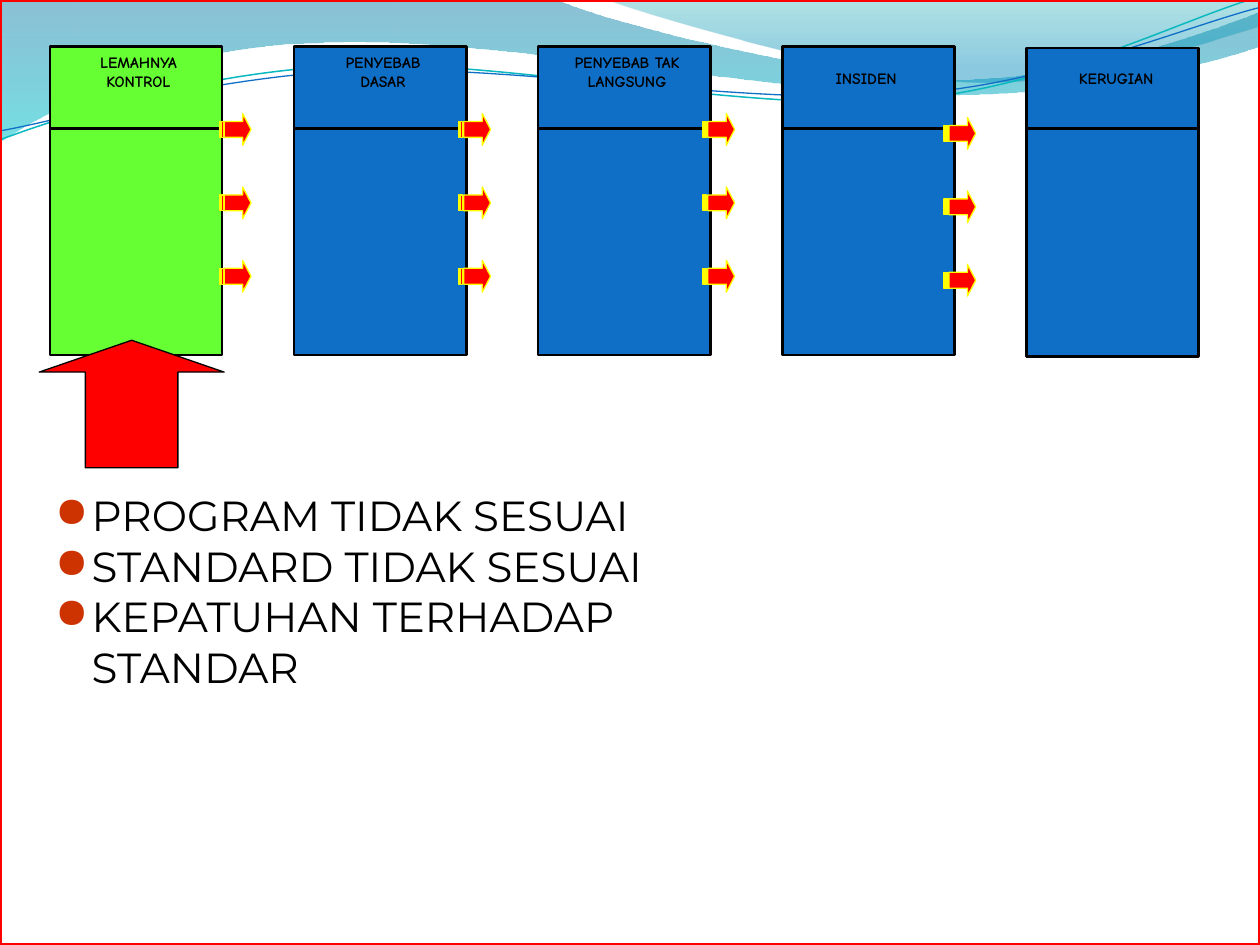
from pptx import Presentation
from pptx import util as u
from pptx.dml import color as dml
from pptx.enum import shapes, text
from pptx.oxml import ns, xmlchemy as xc

KIND = shapes.MSO_SHAPE
BLACK, RED, BLUE = "000000", "FF0000", "0F6FC6"
LABEL = {"name": "Comic Neue", "size": u.Pt(9), "bold": True}
BODY = {"name": "Montserrat", "size": u.Pt(24), "bold": False}


def rgb(code):
    return dml.RGBColor.from_string(code)


def bend(a, b, c, d, steps=24):
    """Points along a cubic curve, without its start."""
    for i in range(1, steps + 1):
        t = i / steps
        s = 1 - t
        yield tuple(s**3 * p + 3 * s * s * t * q + 3 * s * t * t * r + t**3 * e
                    for p, q, r, e in zip(a, b, c, d))


def trace(parts):
    """A part of two numbers is a straight step, one of six is a curve."""
    pts = []
    for part in parts:
        if len(part) == 2:
            pts.append(part)
        else:
            pts += bend(pts[-1], part[:2], part[2:4], part[4:])
    return [(u.Cm(x), u.Cm(y)) for x, y in pts]


class Pen:
    def __init__(self, slide):
        self.slide = slide
        self.set = slide.shapes

    def paint(self, item, fill, line, width):
        item.shadow.inherit = False
        if fill:
            item.fill.solid()
            item.fill.fore_color.rgb = rgb(fill)
        else:
            item.fill.background()
        if line:
            item.line.color.rgb = rgb(line)
            item.line.width = u.Pt(width)
        else:
            item.line.fill.background()
        return item

    def shape(self, kind, box, fill, line, width, adj=()):
        item = self.set.add_shape(kind, *map(u.Cm, box))
        for i, val in enumerate(adj):
            item.adjustments[i] = val
        return self.paint(item, fill, line, width)

    def free(self, parts, close=False, line=None, width=0):
        first, *rest = trace(parts)
        path = self.set.build_freeform(*first)
        path.add_line_segments(rest, close=close)
        return self.paint(path.convert_to_shape(), None, line, width)

    def wave(self, parts, stops):
        item = self.free(parts, close=True)
        item.fill.gradient()
        item.fill.gradient_angle = 270
        for stop, (pos, code, _) in zip(item.fill.gradient_stops, stops):
            stop.position = pos
            stop.color.rgb = rgb(code)
        tints = item._element.spPr.iter(ns.qn("a:srgbClr"))
        for tint, (_, _, alpha) in zip(tints, stops):
            node = xc.OxmlElement("a:alpha")
            node.set("val", str(alpha * 1000))
            tint.append(node)

    def rule(self, x1, y1, x2, y2):
        item = self.set.add_connector(
            shapes.MSO_CONNECTOR.STRAIGHT, *map(u.Cm, (x1, y1, x2, y2)))
        item.line.color.rgb = rgb(BLACK)
        item.line.width = u.Pt(1.5)
        item._element.spPr.append(xc.OxmlElement("a:effectLst"))

    def words(self, box, lines, form, align, wrap=True, dot=None):
        frame = self.set.add_textbox(*map(u.Cm, box)).text_frame
        frame.word_wrap = wrap
        for i, line in enumerate(lines):
            para = frame.add_paragraph() if i else frame.paragraphs[0]
            para.alignment = align
            run = para.add_run()
            run.text = line
            run.font.color.rgb = rgb(BLACK)
            for key, val in form.items():
                setattr(run.font, key, val)
            if dot:
                self.bullet(para, dot)

    def bullet(self, para, code):
        props = para._p.get_or_add_pPr()
        hang = u.Cm(0.74)
        props.set("marL", str(hang))
        props.set("indent", str(-hang))
        tint = xc.OxmlElement("a:buClr")
        hue = xc.OxmlElement("a:srgbClr")
        hue.set("val", code)
        tint.append(hue)
        mark = xc.OxmlElement("a:buChar")
        mark.set("char", "●")
        props.extend([tint, mark])


def main():
    deck = Presentation()
    deck.slide_width, deck.slide_height = u.Cm(25.4), u.Cm(19.05)
    pen = Pen(deck.slides.add_slide(deck.slide_layouts[6]))

    # Waves along the top
    pen.wave([(0, 0), (11.18, -0.03), (12.09, 0.43, 16.87, 1.6, 19.25, 1.6),
              (21.67, 1.6, 24.33, 0.66, 25.4, 0.23), (25.43, 0.91),
              (24.97, 1.12, 22.1, 1.93, 18.95, 1.91),
              (15.8, 1.91, 9.7, 0.71, 6.53, 0.86),
              (3.28, 0.91, 1.17, 2.11, -0.03, 2.87)],
             [(0, "0074A1", 45), (1, "00C6CF", 55)])
    pen.wave([(12.17, -0.03), (12.93, 0.28, 17.32, 1.57, 19.53, 1.65),
              (21.74, 1.75, 24.41, 0.81, 25.4, 0.53), (25.4, 0)],
             [(0, "00A1A9", 30), (0.8, "008BBF", 45)])
    pen.free([(0, 2.82), (1.22, 2.36, 4.01, 1.45, 7.04, 1.32),
              (10.03, 1.19, 15.06, 2.26, 18.11, 2.03),
              (21.16, 1.8, 23.83, 0.38, 25.35, -0.05)], line="0AB8BF", width=0.85)
    pen.free([(0, 2.64), (1.19, 2.44, 4.17, 1.55, 7.19, 1.42),
              (10.24, 1.3, 15.16, 2.13, 18.21, 1.91),
              (21.23, 1.7, 23.9, 0.53, 25.4, 0.15)], line=BLUE, width=0.75)

    # Five panels: lines, fill, top, label centre
    left, step, wide, high = 1.01, 4.92, 3.47, 6.22
    panels = [(["LEMAHNYA", "KONTROL"], "66FF33", 0.94, 2.79),
              (["PENYEBAB", "DASAR"], BLUE, 0.94, 7.72),
              (["PENYEBAB TAK", "LANGSUNG"], BLUE, 0.94, 12.64),
              (["INSIDEN"], BLUE, 0.94, 17.46),
              (["KERUGIAN"], BLUE, 0.97, 22.5)]
    for i, (lines, fill, top, mid) in enumerate(panels):
        x = left + i * step
        pen.shape(KIND.RECTANGLE, (x, top, wide, high), fill, BLACK, 1.5)
        pen.rule(x, 2.59, x + wide, 2.59)
        y = 0.94 if len(lines) == 2 else 1.27
        pen.words((mid - 1.75, y, 3.5, 0.4 * len(lines)), lines, LABEL,
                  text.PP_ALIGN.CENTER, wrap=False)

    # Three striped arrows between neighbours
    for x, top in [(4.42, 2.29), (9.25, 2.29), (14.17, 2.29), (19.03, 2.37)]:
        for row in range(3):
            pen.shape(KIND.STRIPED_RIGHT_ARROW, (x, top + row * 1.48, 0.64, 0.64),
                      RED, "FFFF00", 0.75, (0.5, 0.26))

    # Causes, pointer and frame
    pen.words((0.86, 9.75, 13.84, 4.37),
              ["PROGRAM TIDAK SESUAI", "STANDARD TIDAK SESUAI",
               "KEPATUHAN TERHADAP STANDAR"],
              BODY, text.PP_ALIGN.LEFT, dot="CC3300")
    pen.shape(KIND.UP_ARROW, (0.79, 6.86, 3.73, 2.57), RED, BLACK, 0.75, (0.5, 0.25))
    pen.shape(KIND.RECTANGLE, (0, 0, 25.4, 19.05), None, RED, 2.25)

    deck.save("out.pptx")


if __name__ == "__main__":
    main()
